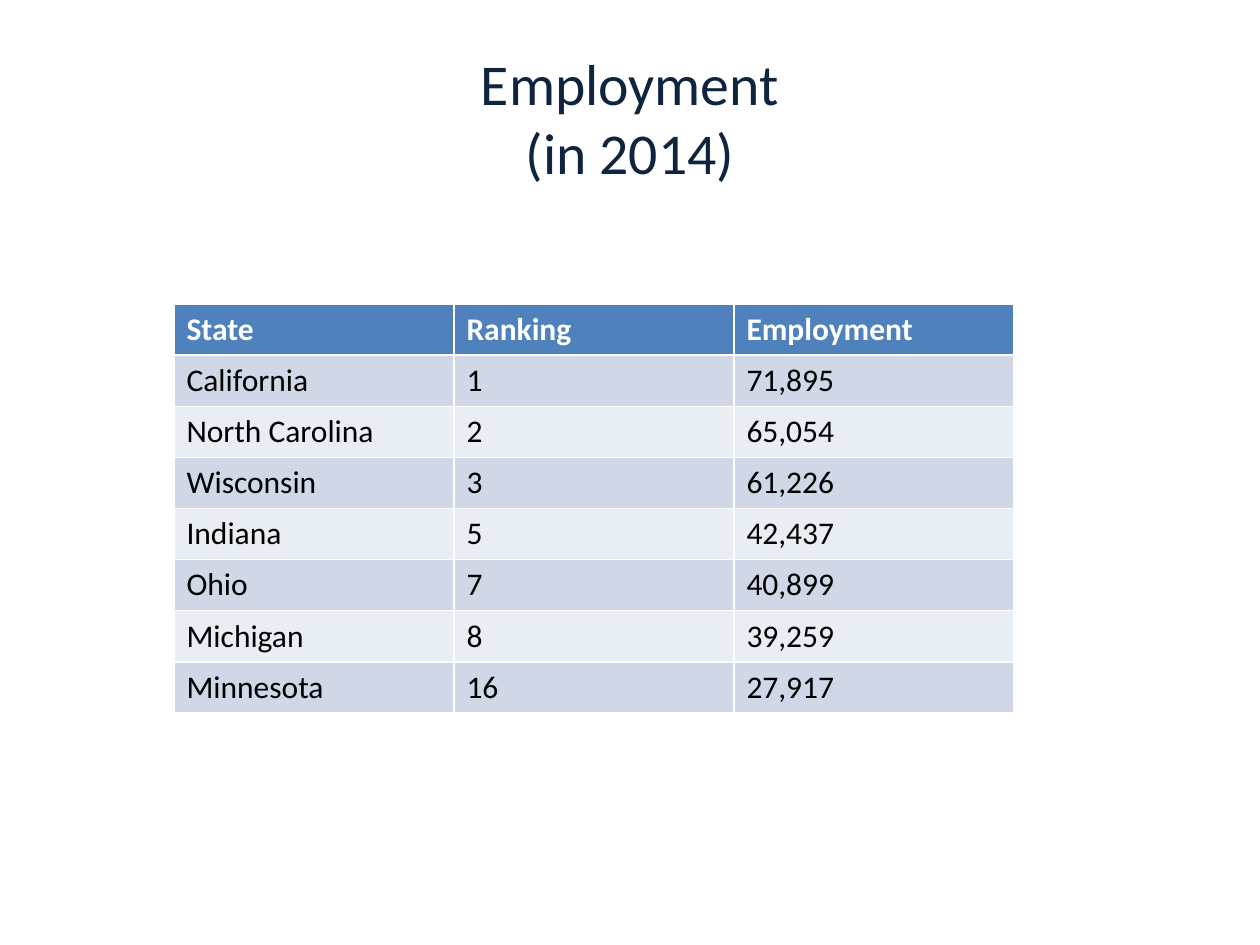
from pptx import Presentation
from pptx.dml.color import RGBColor
from pptx.enum.text import MSO_ANCHOR, PP_ALIGN
from pptx.util import Pt

MIDDLE = MSO_ANCHOR.MIDDLE
CENTER = PP_ALIGN.CENTER

NAVY = RGBColor(0x0F, 0x24, 0x3E)
WHITE = RGBColor(0xFF, 0xFF, 0xFF)
BLACK = RGBColor(0x00, 0x00, 0x00)
HEADER_BLUE = RGBColor(0x4F, 0x81, 0xBD)
BANDS = (RGBColor(0xE9, 0xED, 0xF4), RGBColor(0xD0, 0xD8, 0xE8))

FONT = "Calibri"
COLUMN_WIDTH = 160
ROW_HEIGHT = 29.2
ROWS = [
    ("State", "Ranking", "Employment"),
    ("California", "1", "71,895"),
    ("North Carolina", "2", "65,054"),
    ("Wisconsin", "3", "61,226"),
    ("Indiana", "5", "42,437"),
    ("Ohio", "7", "40,899"),
    ("Michigan", "8", "39,259"),
    ("Minnesota", "16", "27,917"),
]


def style_font(font, size, color, bold=False):
    font.name = FONT
    font.size = Pt(size)
    font.color.rgb = color
    font.bold = bold


deck = Presentation()
deck.slide_width = Pt(720)
deck.slide_height = Pt(540)
page = deck.slides.add_slide(deck.slide_layouts[6])

# Title
title_box = page.shapes.add_textbox(Pt(36), Pt(21.6), Pt(648), Pt(90))
title_frame = title_box.text_frame
title_frame.word_wrap = True
title_frame.vertical_anchor = MIDDLE
title_para = title_frame.paragraphs[0]
title_para.text = "Employment\v(in 2014)"
title_para.alignment = CENTER
style_font(title_para.font, 33, NAVY)

# Employment table; the default table style draws the white rules
column_count = len(ROWS[0])
table = page.shapes.add_table(
    len(ROWS), column_count, Pt(99.4), Pt(173.8),
    Pt(COLUMN_WIDTH * column_count), Pt(ROW_HEIGHT * len(ROWS)),
).table
for column in table.columns:
    column.width = Pt(COLUMN_WIDTH)

for row_index, values in enumerate(ROWS):
    is_header = row_index == 0
    table.rows[row_index].height = Pt(ROW_HEIGHT)
    for column_index, value in enumerate(values):
        cell = table.cell(row_index, column_index)
        cell.fill.solid()
        cell.fill.fore_color.rgb = HEADER_BLUE if is_header else BANDS[row_index % 2]
        para = cell.text_frame.paragraphs[0]
        para.text = value
        style_font(para.font, 18, WHITE if is_header else BLACK, is_header)

deck.save("out.pptx")
